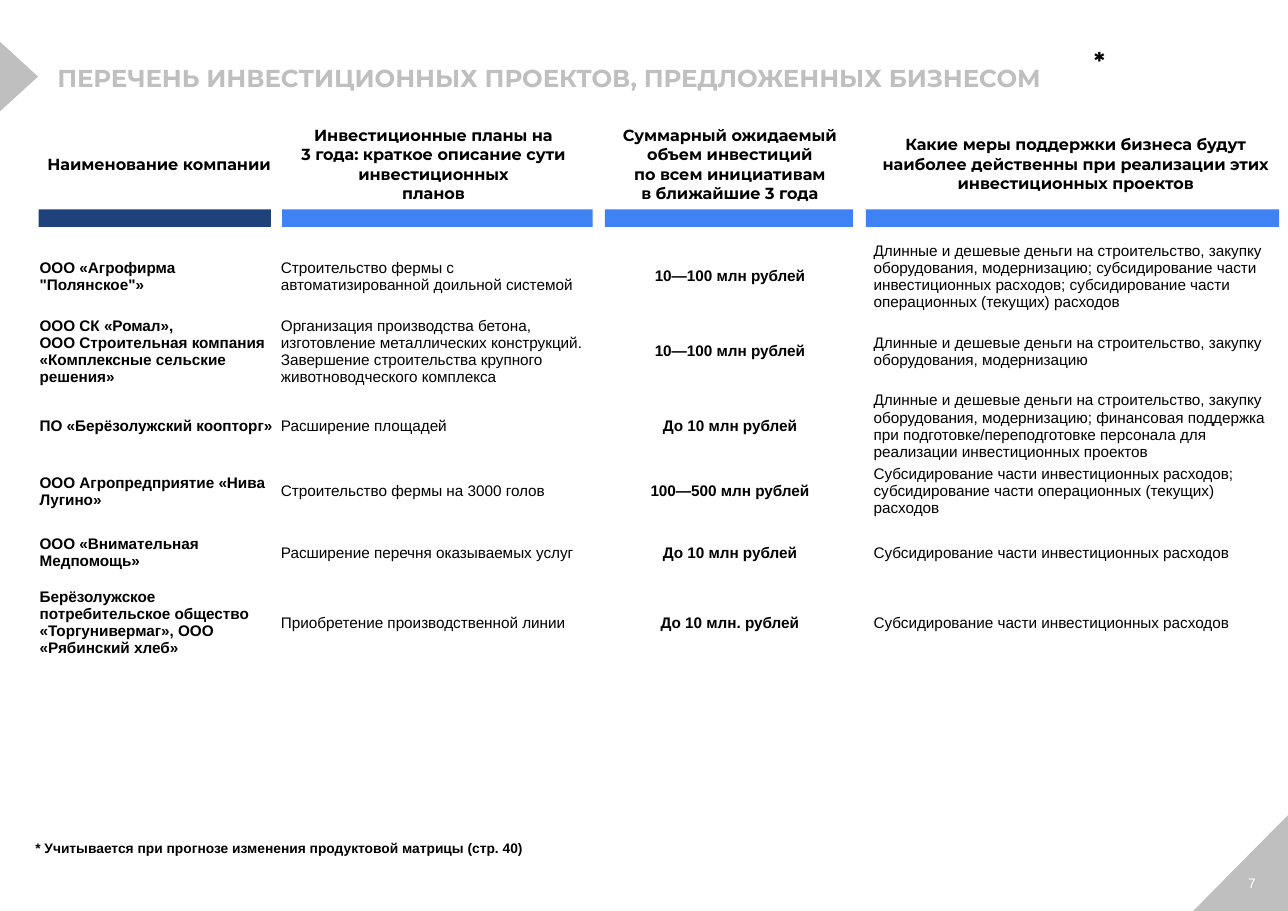
from dataclasses import dataclass

from pptx import Presentation
from pptx.dml.color import RGBColor
from pptx.enum.shapes import MSO_SHAPE as Shape
from pptx.enum.text import MSO_ANCHOR as Anchor, PP_ALIGN as Align
from pptx.util import Emu, Pt

EMU_PER_PX = 9144  # 100 px to the inch


@dataclass(frozen=True)
class Theme:
    black: str = "000000"
    white: str = "FFFFFF"
    grey: str = "BFBFBF"
    navy: str = "1F427B"
    blue: str = "3E82F4"
    heading_font: str = "Montserrat"
    body_font: str = "Arial"
    title_size: float = 16
    header_size: float = 10.5
    body_size: float = 10
    small_size: float = 9


THEME = Theme()
COLUMN_WIDTHS = (219, 279, 259, 369)
ROW_HEIGHTS = (71, 29, 68, 68, 68, 50, 62, 65)
HEADER_BARS = ((0, 211), (221, 282), (514, 225), (751, 375))  # offset, width
HEADERS = (
    "Наименование компании",
    "Инвестиционные планы на\n3 года: краткое описание сути инвестиционных\nпланов",
    "Суммарный ожидаемый\nобъем инвестиций\nпо всем инициативам\nв ближайшие 3 года",
    "Какие меры поддержки бизнеса будут наиболее действенны "
    "при реализации этих инвестиционных проектов",
)
CHEAP_MONEY = ("Длинные и дешевые деньги на строительство, "
               "закупку оборудования, модернизацию")
SUBSIDY = "Субсидирование части инвестиционных расходов"
RUNNING_COSTS = "субсидирование части операционных (текущих) расходов"
PROJECTS = (
    ("ООО «Агрофирма \"Полянское\"»",
     "Строительство фермы с автоматизированной доильной системой",
     "10—100 млн рублей",
     f"{CHEAP_MONEY}; {SUBSIDY.lower()}; {RUNNING_COSTS}"),
    ("ООО СК «Ромал»,\nООО Строительная компания «Комплексные сельские решения»",
     "Организация производства бетона, изготовление металлических конструкций. "
     "Завершение строительства крупного животноводческого комплекса",
     "10—100 млн рублей", CHEAP_MONEY),
    ("ПО «Берёзолужский коопторг»", "Расширение площадей", "До 10 млн рублей",
     f"{CHEAP_MONEY}; финансовая поддержка при подготовке/переподготовке "
     "персонала для реализации инвестиционных проектов"),
    ("ООО Агропредприятие «Нива Лугино»", "Строительство фермы на 3000 голов",
     "100—500 млн рублей", f"{SUBSIDY}; {RUNNING_COSTS}"),
    ("ООО «Внимательная Медпомощь»", "Расширение перечня оказываемых услуг",
     "До 10 млн рублей", SUBSIDY),
    ("Берёзолужское потребительское общество «Торгунивермаг», "
     "ООО «Рябинский хлеб»",
     "Приобретение производственной линии", "До 10 млн. рублей", SUBSIDY),
)


def px(length):
    return Emu(length * EMU_PER_PX)


def set_text(frame, text, size, font, color=THEME.black, bold=False,
             align=Align.LEFT, space_before=0):
    frame.text = text
    for para in frame.paragraphs:
        para.alignment = align
        para.space_before = Pt(space_before)
        for span in para.runs:
            span.font.size = Pt(size)
            span.font.name = font
            span.font.bold = bold
            span.font.color.rgb = RGBColor.from_string(color)


def set_margins(target, left=0, top=0, right=0, bottom=0):
    target.margin_left, target.margin_top = px(left), px(top)
    target.margin_right, target.margin_bottom = px(right), px(bottom)


def paint(shape, color):
    shape.shadow.inherit = False
    shape.fill.solid()
    shape.fill.fore_color.rgb = RGBColor.from_string(color)
    shape.line.fill.background()


def add_label(slide, box, text, size, font, margins=(0, 3, 0, 0), **style):
    label = slide.shapes.add_textbox(*map(px, box))
    frame = label.text_frame
    frame.word_wrap = True
    set_margins(frame, *margins)
    set_text(frame, text, size, font, **style)


def add_title(slide, box):
    """Place the arrow at the left edge, the heading and its footnote mark."""
    left, top, width, height = box
    arrow = slide.shapes.add_shape(
        Shape.ISOSCELES_TRIANGLE, *map(px, (left - 15, top + 13, 64, 35)))
    arrow.rotation = 90
    paint(arrow, THEME.grey)
    add_label(slide, (left + 52, top + 17, width - 156, 28),
              "ПЕРЕЧЕНЬ ИНВЕСТИЦИОННЫХ ПРОЕКТОВ, ПРЕДЛОЖЕННЫХ БИЗНЕСОМ",
              THEME.title_size, THEME.heading_font, margins=(0, 1, 0, 0),
              color=THEME.grey, bold=True)
    add_label(slide, (left + 993, top, 35, height), "*", THEME.title_size,
              THEME.heading_font, bold=True, space_before=2.4)


def fill_cell(cell, text, column, is_header):
    cell.fill.background()
    cell.vertical_anchor = Anchor.MIDDLE
    set_margins(cell, *((0, 0, 0, 0) if is_header else (1, 1, 1, 0)))
    centred = is_header or column == 2
    set_text(cell.text_frame, text,
             THEME.header_size if is_header else THEME.body_size,
             THEME.heading_font if is_header else THEME.body_font,
             bold=is_header or column in (0, 2),
             align=Align.CENTER if centred else Align.LEFT)


def add_projects(slide, box):
    """Place the project table and the coloured bars under its header."""
    rows = (HEADERS, ("",) * len(HEADERS), *PROJECTS)
    table = slide.shapes.add_table(
        len(rows), len(HEADERS), *map(px, box)).table
    table.first_row = table.horz_banding = False
    for column, width in zip(table.columns, COLUMN_WIDTHS):
        column.width = px(width)
    for row, height in zip(table.rows, ROW_HEIGHTS):
        row.height = px(height)
    for row_index, texts in enumerate(rows):
        for column, text in enumerate(texts):
            fill_cell(table.cell(row_index, column), text, column, row_index == 0)

    left, top = box[:2]
    for index, (offset, width) in enumerate(HEADER_BARS):
        bar = slide.shapes.add_shape(
            Shape.RECTANGLE, *map(px, (left + offset, top + 76, width, 16)))
        paint(bar, THEME.blue if index else THEME.navy)


def add_page_corner(slide, box):
    left, top, width, height = box
    right, bottom = left + width, top + height
    outline = slide.shapes.build_freeform(right, top, scale=EMU_PER_PX)
    outline.add_line_segments([(left, bottom), (right, bottom)], close=True)
    paint(outline.convert_to_shape(), THEME.grey)
    add_label(slide, (left + 40, top + 49, 45, 27), "7", THEME.small_size,
              THEME.body_font, margins=(10, 5, 10, 5), color=THEME.white)


def add_footnote(slide, box):
    add_label(slide, box,
              "* Учитывается при прогнозе изменения продуктовой матрицы (стр. 40)",
              THEME.small_size, THEME.body_font, bold=True, space_before=2.4)


def main():
    deck = Presentation()
    deck.slide_width, deck.slide_height = px(1169), px(827)
    slide = deck.slides.add_slide(deck.slide_layouts[6])
    add_projects(slide, (35, 114, sum(COLUMN_WIDTHS), sum(ROW_HEIGHTS)))
    add_title(slide, (0, 39, 1169, 60))
    add_page_corner(slide, (1083, 740, 86, 87))
    add_footnote(slide, (32, 759, 962, 36))
    deck.save("out.pptx")


if __name__ == "__main__":
    main()
